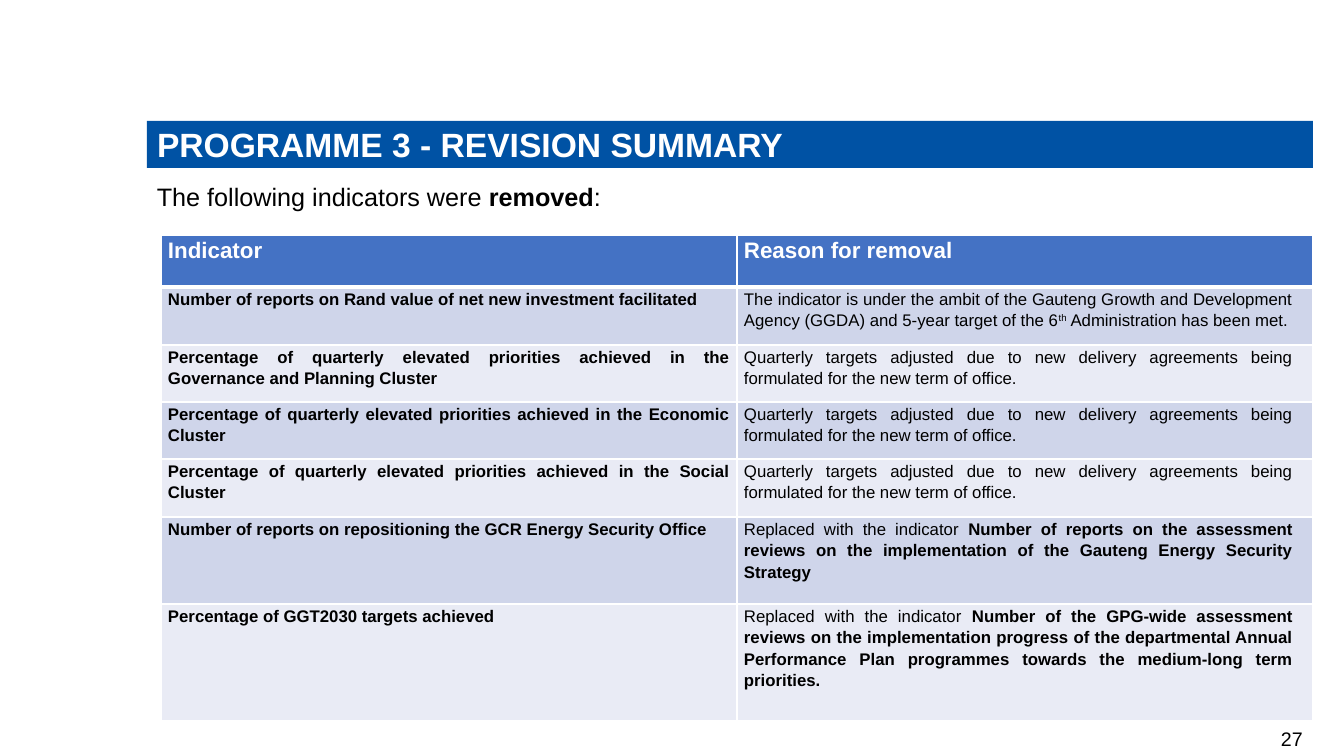
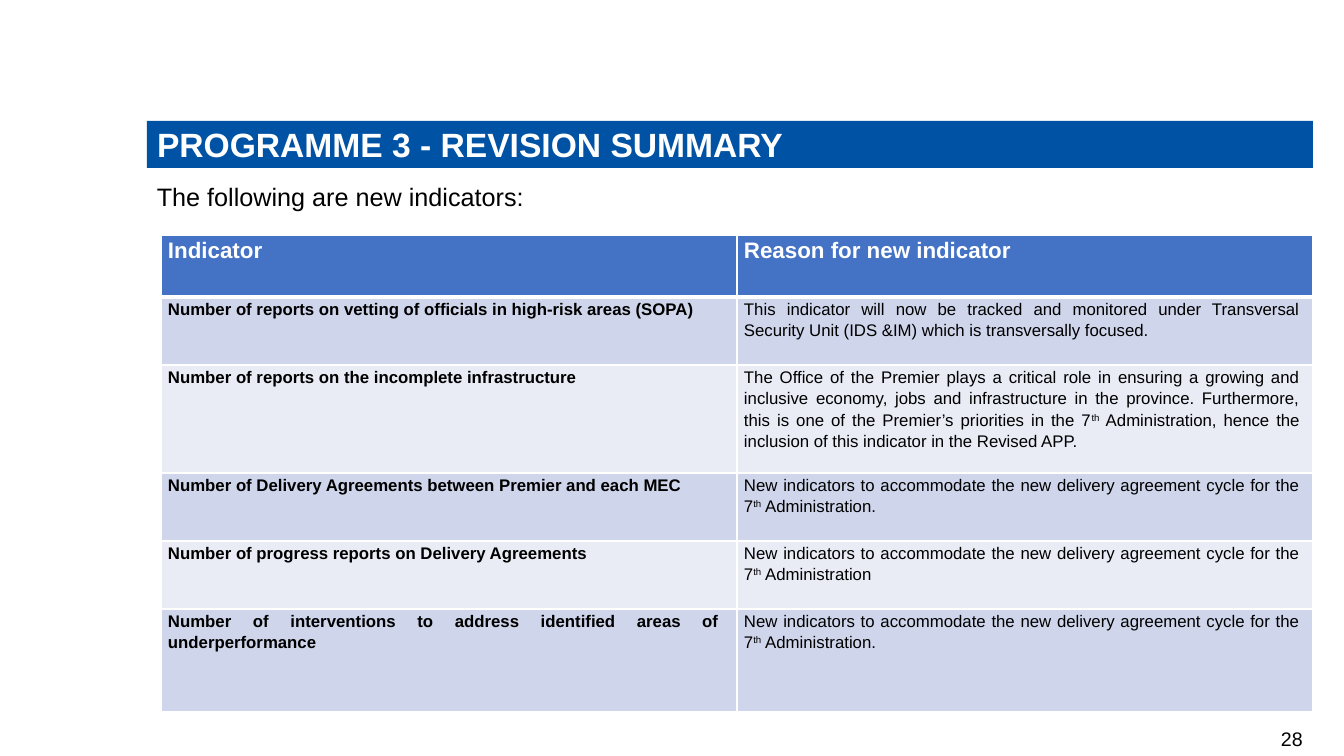
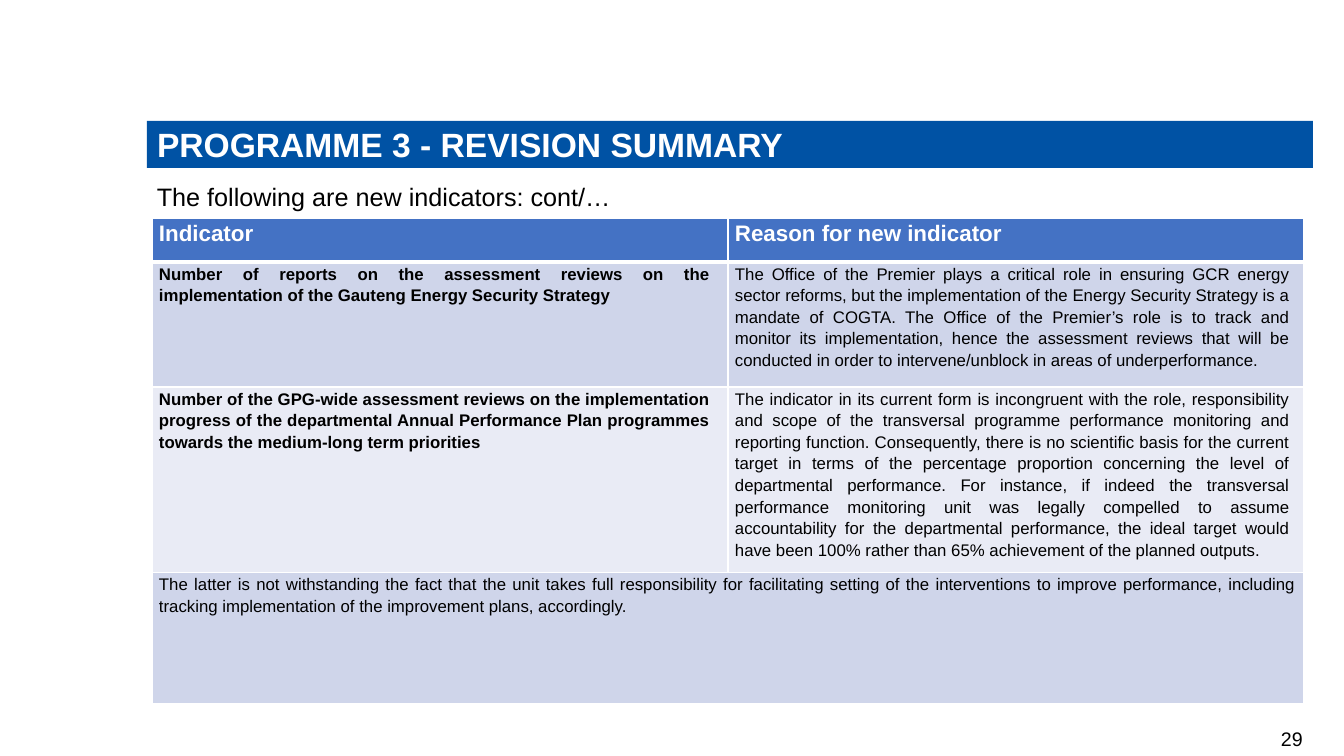
from dataclasses import dataclass
from typing import NamedTuple

from lxml import etree
from pptx import Presentation
from pptx.dml.color import RGBColor
from pptx.enum.text import MSO_ANCHOR, MSO_AUTO_SIZE, PP_ALIGN
from pptx.oxml.ns import qn
from pptx.util import Pt

PX = 914400 / 100.8
LEFT, JUST = PP_ALIGN.LEFT, PP_ALIGN.JUSTIFY
MIDDLE, FIXED = MSO_ANCHOR.MIDDLE, MSO_AUTO_SIZE.NONE
TITLE_ONLY = 5


@dataclass(frozen=True)
class Theme:
    font: str = "Arial"
    band: str = "0052A4"
    head: str = "4472C4"
    rows: tuple[str, str] = ("CFD5EA", "E9EBF5")
    ink: str = "000000"
    light: str = "FFFFFF"
    title: int = 24
    lead: int = 18
    label: int = 16
    page: int = 14
    body: int = 12
    line: int = 1
    rule: int = 3


class Run(NamedTuple):
    text: str
    bold: bool = False
    raised: bool = False


Text = tuple[Run, ...]


class Row(NamedTuple):
    name: str
    why: Text | None
    high: int


class Page(NamedTuple):
    number: int
    lead: Text
    reason: str
    left: int
    top: int
    head: int
    gaps: tuple[int, int]
    rows: tuple[Row, ...]


THEME = Theme()
TITLE = "PROGRAMME 3 - REVISION SUMMARY"
COLUMN = 576
PAD = 7


def px(count: int) -> int:
    return round(count * PX)


def plain(text: str) -> Text:
    return (Run(text),)


def ordinal(before: str, after: str) -> Text:
    return Run(before), Run("th", raised=True), Run(after)


def swap(name: str) -> Text:
    return Run("Replaced with the indicator "), Run(name, bold=True)


def cycle(end: str = ".") -> Text:
    return ordinal("New indicators to accommodate the new delivery agreement cycle for the 7",
                   f" Administration{end}")


def write(frame, text: Text, size: int, color: str, bold: bool = False,
          align=LEFT, spacing: float = 1.0) -> None:
    para = frame.paragraphs[0]
    para.alignment, para.line_spacing = align, spacing
    font = para.font
    font.name, font.size, font.bold = THEME.font, Pt(size), bold
    font.color.rgb = RGBColor.from_string(color)
    for part in text:
        run = para.add_run()
        run.text = part.text
        if part.bold:
            run.font.bold = True
        if part.raised:
            run._r.get_or_add_rPr().set("baseline", "30000")


def place(shape, left: int, top: int, width: int, height: int) -> None:
    shape.left, shape.top = px(left), px(top)
    shape.width, shape.height = px(width), px(height)


def paint(fill, color: str) -> None:
    fill.solid()
    fill.fore_color.rgb = RGBColor.from_string(color)


def edge(cell, top: int, bottom: int) -> None:
    """Draw the cell borders; widths are in points."""
    props = cell._tc.get_or_add_tcPr()
    sides = {"lnL": THEME.line, "lnR": THEME.line, "lnT": top, "lnB": bottom}
    for side, width in sides.items():
        line = etree.SubElement(props, qn(f"a:{side}"), w=str(Pt(width)))
        solid = etree.SubElement(line, qn("a:solidFill"))
        etree.SubElement(solid, qn("a:srgbClr"), val=THEME.light)


def add_band(slide) -> None:
    band = slide.shapes.title
    place(band, 147, 121, 1166, 47)
    paint(band.fill, THEME.band)
    frame = band.text_frame
    frame.auto_size, frame.vertical_anchor = FIXED, MIDDLE
    write(frame, plain(TITLE), THEME.title, THEME.light, bold=True)


def add_note(slide, box: tuple[int, int, int, int], text: Text, size: int) -> None:
    frame = slide.shapes.add_textbox(*map(px, box)).text_frame
    frame.word_wrap = True
    write(frame, text, size, THEME.ink)


def add_grid(slide, page: Page) -> None:
    heights = [page.head, *(row.high for row in page.rows)]
    table = slide.shapes.add_table(
        len(heights), 2, px(page.left), px(page.top),
        px(2 * COLUMN), px(sum(heights))).table
    table.first_row = table.horz_banding = False
    for column in table.columns:
        column.width = px(COLUMN)

    lines = [(plain("Indicator"), plain(page.reason)),
             *((plain(row.name), row.why) for row in page.rows)]
    for i, (texts, high) in enumerate(zip(lines, heights)):
        table.rows[i].height = px(high)
        head, wide = i == 0, texts[1] is None
        for j, text in enumerate(texts):
            cell = table.cell(i, j)
            cell.margin_left, cell.margin_right = px(PAD), px(page.gaps[j])
            cell.margin_top = cell.margin_bottom = 0
            edge(cell, THEME.rule if i == 1 else THEME.line,
                 THEME.rule if head else THEME.line)
            paint(cell.fill, THEME.head if head else THEME.rows[(i - 1) % 2])
            if text:
                write(cell.text_frame, text,
                      THEME.label if head else THEME.body,
                      THEME.light if head else THEME.ink,
                      head or (j == 0 and not wide), JUST, 1.15)
        if wide:
            table.cell(i, 0).merge(table.cell(i, 1))
            table.cell(i, 0).margin_right = px(PAD)


TERM = plain("Quarterly targets adjusted due to new delivery agreements being "
             "formulated for the new term of office.")
ENERGY = ("Number of reports on the assessment reviews on the implementation "
          "of the Gauteng Energy Security Strategy")
WIDE = ("Number of the GPG-wide assessment reviews on the implementation progress "
        "of the departmental Annual Performance Plan programmes towards the "
        "medium-long term priorities")
ELEVATED = "Percentage of quarterly elevated priorities achieved in the"
FRESH = "Reason for new indicator"

PAGES = (
    Page(27, (Run("The following indicators were "), Run("removed", bold=True), Run(":")),
         "Reason for removal", 161, 235, 52, (PAD, 20), (
        Row("Number of reports on Rand value of net new investment facilitated",
            ordinal("The indicator is under the ambit of the Gauteng Growth and Development "
                    "Agency (GGDA) and 5-year target of the 6",
                    " Administration has been met."), 58),
        Row(f"{ELEVATED} Governance and Planning Cluster", TERM, 57),
        Row(f"{ELEVATED} Economic Cluster", TERM, 57),
        Row(f"{ELEVATED} Social Cluster", TERM, 58),
        Row("Number of reports on repositioning the GCR Energy Security Office",
            swap(ENERGY), 87),
        Row("Percentage of GGT2030 targets achieved", swap(f"{WIDE}."), 117),
    )),
    Page(28, plain("The following are new indicators:"),
         FRESH, 161, 235, 62, (18, 13), (
        Row("Number of reports on vetting of officials in high-risk areas (SOPA)",
            plain("This indicator will now be tracked and monitored under Transversal "
                  "Security Unit (IDS &IM) which is transversally focused."), 68),
        Row("Number of reports on the incomplete infrastructure",
            ordinal("The Office of the Premier plays a critical role in ensuring a growing "
                    "and inclusive economy, jobs and infrastructure in the province. "
                    "Furthermore, this is one of the Premier’s priorities in the 7",
                    " Administration, hence the inclusion of this indicator in the "
                    "Revised APP."), 108),
        Row("Number of Delivery Agreements between Premier and each MEC", cycle(), 68),
        Row("Number of progress reports on Delivery Agreements", cycle(""), 68),
        Row("Number of interventions to address identified areas of underperformance",
            cycle(), 103),
    )),
    Page(29, plain("The following are new indicators: cont/…"),
         FRESH, 152, 218, 44, (18, 14), (
        Row(ENERGY,
            plain("The Office of the Premier plays a critical role in ensuring GCR energy "
                  "sector reforms, but the implementation of the Energy Security Strategy "
                  "is a mandate of COGTA. The Office of the Premier’s role is to track and "
                  "monitor its implementation, hence the assessment reviews that will be "
                  "conducted in order to intervene/unblock in areas of "
                  "underperformance."), 125),
        Row(WIDE,
            plain("The indicator in its current form is incongruent with the role, "
                  "responsibility and scope of the transversal programme performance "
                  "monitoring and reporting function. Consequently, there is no scientific "
                  "basis for the current target in terms of the percentage proportion "
                  "concerning the level of departmental performance. For instance, if "
                  "indeed the transversal performance monitoring unit was legally compelled "
                  "to assume accountability for the departmental performance, the ideal "
                  "target would have been 100% rather than 65% achievement of the planned "
                  "outputs."), 185),
        Row("The latter is not withstanding the fact that the unit takes full "
            "responsibility for facilitating setting of the interventions to improve "
            "performance, including tracking implementation of the improvement plans, "
            "accordingly.", None, 131),
    )),
)


def main() -> None:
    deck = Presentation()
    deck.slide_width, deck.slide_height = px(1344), px(756)
    for page in PAGES:
        slide = deck.slides.add_slide(deck.slide_layouts[TITLE_ONLY])
        add_band(slide)
        add_note(slide, (147, 176, 1178, 43), page.lead, THEME.lead)
        add_grid(slide, page)
        add_note(slide, (1271, 722, 67, 34), plain(str(page.number)), THEME.page)
    deck.save("out.pptx")


if __name__ == "__main__":
    main()
